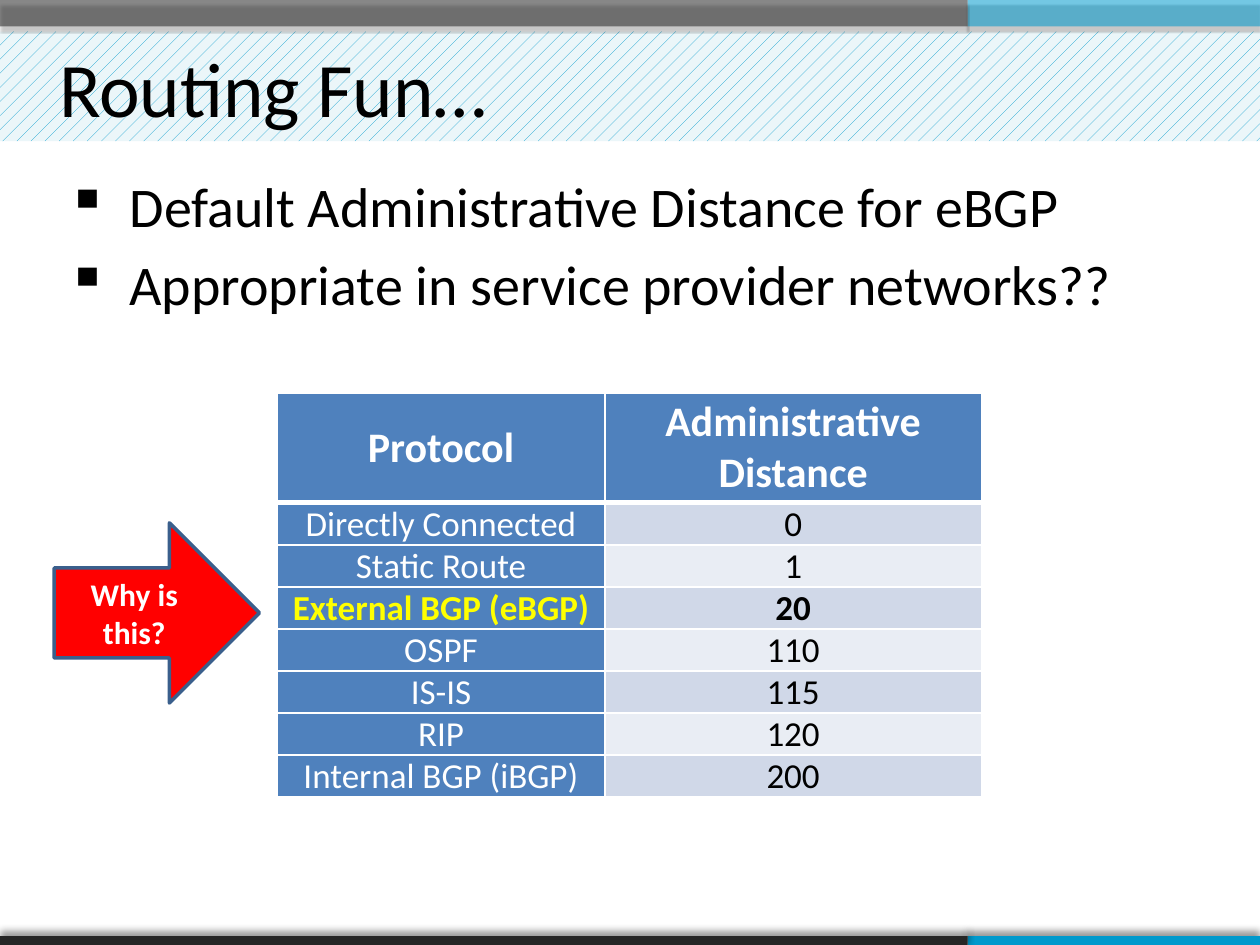
from typing import NamedTuple

from lxml.etree import SubElement
from pptx import Presentation
from pptx.dml.color import RGBColor
from pptx.enum.dml import MSO_PATTERN
from pptx.enum.shapes import MSO_SHAPE
from pptx.enum.text import MSO_ANCHOR, PP_ALIGN
from pptx.oxml.ns import qn
from pptx.util import Inches, Pt

FONT = "Calibri"
COLORS = {
    "black": "000000", "white": "FFFFFF", "yellow": "FFFF00", "red": "FF0000",
    "cyan": "0099CC", "charcoal": "262626", "title_tint": "EBF6F9",
    "table_blue": "4F81BD", "band_dark": "D0D8E8", "band_light": "E9EDF4",
    "arrow_edge": "3A5F8C",
}


class Bar(NamedTuple):
    left: float
    top: float
    width: float
    height: float
    color: str
    opacity: int
    shadow_blur: int
    shadow_angle: int


class Route(NamedTuple):
    protocol: str
    distance: str
    highlighted: bool = False


SPLIT = 7.68
BARS = [
    Bar(SPLIT, 7.43, 10 - SPLIT, 0.1, "cyan", 100, 4, 270),
    Bar(0, 7.43, SPLIT, 0.1, "charcoal", 100, 4, 270),
    Bar(SPLIT, 0, 10 - SPLIT, 0.21, "cyan", 55, 1, 90),
    Bar(0, 0, SPLIT, 0.21, "charcoal", 55, 1, 90),
]
POINTS = [
    "Default Administrative Distance for eBGP",
    "Appropriate in service provider networks??",
]
ROUTES = [
    Route("Directly Connected", "0"),
    Route("Static Route", "1"),
    Route("External BGP (eBGP)", "20", True),
    Route("OSPF", "110"),
    Route("IS-IS", "115"),
    Route("RIP", "120"),
    Route("Internal BGP (iBGP)", "200"),
]


def rgb(name: str) -> RGBColor:
    return RGBColor.from_string(COLORS[name])


def add_run(paragraph, text: str, size: int, color: str, bold: bool = False) -> None:
    run = paragraph.add_run()
    run.text = text
    run.font.name = FONT
    run.font.size = Pt(size)
    run.font.bold = bold
    run.font.color.rgb = rgb(color)


def add_bar(slide, bar: Bar) -> None:
    strip = slide.shapes.add_shape(
        MSO_SHAPE.RECTANGLE, Inches(bar.left), Inches(bar.top),
        Inches(bar.width), Inches(bar.height))
    strip.fill.solid()
    strip.fill.fore_color.rgb = rgb(bar.color)
    strip.line.fill.background()
    properties = strip.element.spPr
    if bar.opacity < 100:
        tint = properties.find(qn("a:solidFill"))[0]
        SubElement(tint, qn("a:alpha"), val=str(bar.opacity * 1000))
    effects = SubElement(properties, qn("a:effectLst"))
    shadow = SubElement(
        effects, qn("a:outerShdw"), blurRad=str(Pt(bar.shadow_blur)),
        dist=str(Pt(3)), dir=str(bar.shadow_angle * 60000), rotWithShape="0")
    shade = SubElement(shadow, qn("a:srgbClr"), val=COLORS["black"])
    SubElement(shade, qn("a:alpha"), val="40000")


def add_points(slide, points: list[str]) -> None:
    body = slide.shapes.add_textbox(
        Inches(0.43), Inches(1.31), Inches(9.45), Inches(5.59)).text_frame
    body.word_wrap = True
    for index, point in enumerate(points):
        paragraph = body.add_paragraph() if index else body.paragraphs[0]
        properties = paragraph._p.get_or_add_pPr()
        properties.set("marL", str(Inches(0.5)))
        properties.set("indent", str(Inches(-0.5)))
        SubElement(properties, qn("a:buChar"), char="▪")
        if index:
            paragraph.space_before = Pt(6.4)
        add_run(paragraph, point, 32, "black")


def set_borders(cell, top: int, bottom: int) -> None:
    properties = cell._tc.get_or_add_tcPr()
    widths = {"a:lnL": 1, "a:lnR": 1, "a:lnT": top, "a:lnB": bottom}
    for position, (side, width) in enumerate(widths.items()):
        edge = properties.makeelement(qn(side), {"w": str(Pt(width))})
        fill = SubElement(edge, qn("a:solidFill"))
        SubElement(fill, qn("a:srgbClr"), val=COLORS["white"])
        properties.insert(position, edge)


def fill_cell(cell, text: str, size: int, color: str, bold: bool, fill: str) -> None:
    cell.fill.solid()
    cell.fill.fore_color.rgb = rgb(fill)
    cell.vertical_anchor = MSO_ANCHOR.MIDDLE
    cell.margin_left = cell.margin_right = Inches(0.07)
    cell.margin_top = cell.margin_bottom = 0
    paragraph = cell.text_frame.paragraphs[0]
    paragraph.alignment = PP_ALIGN.CENTER
    add_run(paragraph, text, size, color, bold)


def add_distance_table(slide, routes: list[Route]) -> None:
    table = slide.shapes.add_table(
        len(routes) + 1, 2, Inches(2.2), Inches(3.12), Inches(5.59), Inches(3.2)).table
    for column, width in zip(table.columns, (2.6, 2.99)):
        column.width = Inches(width)
    for index, row in enumerate(table.rows):
        row.height = Inches(0.33 if index else 0.87)
        for cell in row.cells:
            set_borders(cell, top=3 if index == 1 else 1, bottom=1 if index else 3)

    for column, heading in enumerate(("Protocol", "Administrative Distance")):
        fill_cell(table.cell(0, column), heading, 24, "white", True, "table_blue")
    for index, route in enumerate(routes, start=1):
        name_color = "yellow" if route.highlighted else "white"
        band = "band_dark" if index % 2 else "band_light"
        fill_cell(table.cell(index, 0), route.protocol, 20, name_color,
                  route.highlighted, "table_blue")
        fill_cell(table.cell(index, 1), route.distance, 20, "black",
                  route.highlighted, band)


def add_question_arrow(slide, question: str) -> None:
    arrow = slide.shapes.add_shape(
        MSO_SHAPE.RIGHT_ARROW, Inches(0.43), Inches(4.15), Inches(1.63), Inches(1.43))
    arrow.shadow.inherit = False
    arrow.fill.solid()
    arrow.fill.fore_color.rgb = rgb("red")
    arrow.line.color.rgb = rgb("arrow_edge")
    arrow.line.width = Pt(2)
    arrow.text_frame.word_wrap = True
    arrow.text_frame.vertical_anchor = MSO_ANCHOR.MIDDLE
    paragraph = arrow.text_frame.paragraphs[0]
    paragraph.alignment = PP_ALIGN.CENTER
    add_run(paragraph, question, 18, "white", True)


def format_title(title, text: str) -> None:
    title.left, title.top = Inches(0), Inches(0.25)
    title.width, title.height = Inches(10), Inches(0.87)
    title.fill.patterned()
    title.fill.pattern = MSO_PATTERN.PERCENT_10
    title.fill.fore_color.rgb = rgb("cyan")
    title.fill.back_color.rgb = rgb("title_tint")
    frame = title.text_frame
    frame.margin_left, frame.margin_right = Inches(0.47), Inches(0.1)
    frame.margin_top = frame.margin_bottom = 0
    frame.vertical_anchor = MSO_ANCHOR.MIDDLE
    frame.paragraphs[0].alignment = PP_ALIGN.LEFT
    add_run(frame.paragraphs[0], text, 44, "black")


def main() -> None:
    deck = Presentation()
    deck.slide_width, deck.slide_height = Inches(10), Inches(7.5)
    slide = deck.slides.add_slide(deck.slide_layouts[5])

    # Edge bars and title band
    for bar in BARS:
        add_bar(slide, bar)
    format_title(slide.shapes.title, "Routing Fun…")

    # Talking points, distances and the question about eBGP
    add_points(slide, POINTS)
    add_distance_table(slide, ROUTES)
    add_question_arrow(slide, "Why is this?")

    deck.save("out.pptx")


if __name__ == "__main__":
    main()
